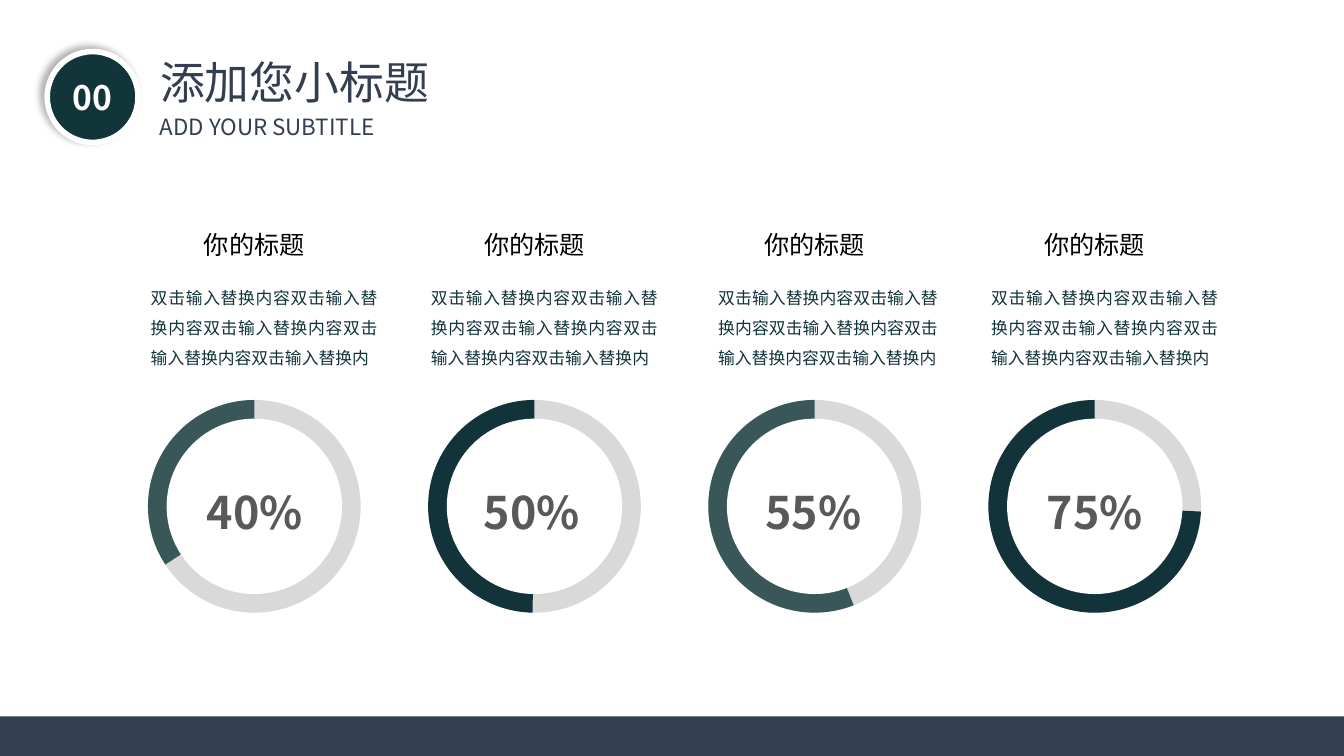
from lxml import etree
from pptx import Presentation
from pptx.dml.color import RGBColor
from pptx.enum.shapes import MSO_SHAPE
from pptx.enum.text import MSO_ANCHOR, MSO_AUTO_SIZE, PP_ALIGN
from pptx.oxml import parse_xml
from pptx.oxml.ns import nsdecls, qn
from pptx.util import Cm, Pt

ELLIPSE, PIE, RECTANGLE = MSO_SHAPE.OVAL, MSO_SHAPE.PIE, MSO_SHAPE.RECTANGLE
LEFT, CENTER, JUSTIFY = PP_ALIGN.LEFT, PP_ALIGN.CENTER, PP_ALIGN.JUSTIFY
TOP, MIDDLE = MSO_ANCHOR.TOP, MSO_ANCHOR.MIDDLE
NO_FIT = MSO_AUTO_SIZE.NONE

WHITE = RGBColor(0xFF, 0xFF, 0xFF)
BLACK = RGBColor(0x00, 0x00, 0x00)
NAVY = RGBColor(0x33, 0x3E, 0x50)
DARK_TEAL = RGBColor(0x12, 0x33, 0x39)
BADGE_TEAL = RGBColor(0x12, 0x35, 0x39)
SOFT_TEAL = RGBColor(0x39, 0x57, 0x59)
TRACK_GRAY = RGBColor(0xD9, 0xD9, 0xD9)
TEXT_GRAY = RGBColor(0x59, 0x59, 0x59)

SLIDE_WIDTH, SLIDE_HEIGHT = 33.87, 19.05
RING_LEFT, RING_TOP, RING_SIZE = 3.73, 10.08, 5.36
RING_THICKNESS, COLUMN_PITCH = 0.47, 7.06
BODY_TEXT = "双击输入替换内容" * 4 + "双击输入替换内"

# Label, start angle of the arc, colour, label offset, body offset
COLUMNS = [
    ("40%", 146.81, SOFT_TEAL, 0.69, 0),
    ("50%", 91.04, DARK_TEAL, 0.61, 0),
    ("55%", 68.45, SOFT_TEAL, 0.64, 0.18),
    ("75%", 2.83, DARK_TEAL, 0.68, 0),
]


class SlideBuilder:
    """Holds the style and the current slide."""

    font_name = "Noto Sans CJK SC"

    def __init__(self, slide):
        self.slide = slide

    def set_text(self, shape, text, size, color, bold=False, align=LEFT,
                 spacing=1.0, anchor=TOP, wrap=True):
        frame = shape.text_frame
        frame_format = {"word_wrap": wrap, "auto_size": NO_FIT,
                        "vertical_anchor": anchor}
        paragraph = frame.paragraphs[0]
        paragraph_format = {"alignment": align, "line_spacing": spacing}
        run = paragraph.add_run()
        run.text = text
        run.font.color.rgb = color
        font_format = {"name": self.font_name, "size": Pt(size), "bold": bold}
        for target, values in ((frame, frame_format),
                               (paragraph, paragraph_format),
                               (run.font, font_format)):
            for name, value in values.items():
                setattr(target, name, value)
        # East Asian glyphs take their own font entry
        east_asian = etree.SubElement(run.font._element, qn("a:ea"))
        east_asian.set("typeface", self.font_name)

    def title(self, left, top, width, height, text, size, color):
        placeholder = self.slide.shapes.title
        position = {"left": left, "top": top, "width": width, "height": height}
        for name, value in position.items():
            setattr(placeholder, name, Cm(value))
        self.set_text(placeholder, text, size, color)

    def text(self, left, top, width, height, text, size, color, **style):
        box = self.slide.shapes.add_textbox(
            Cm(left), Cm(top), Cm(width), Cm(height))
        self.set_text(box, text, size, color, **style)

    def shape(self, kind, left, top, width, height, fill):
        shape = self.slide.shapes.add_shape(
            kind, Cm(left), Cm(top), Cm(width), Cm(height))
        shape.shadow.inherit = False
        shape.fill.solid()
        shape.fill.fore_color.rgb = fill
        shape.line.fill.background()
        return shape

    def ring(self, left, top, size, start_angle, color):
        self.shape(ELLIPSE, left, top, size, size, TRACK_GRAY)
        arc = self.shape(PIE, left, top, size, size, color)
        # Angles are stored in 60000ths of a degree, adjustments in 100000ths
        for index, angle in enumerate((start_angle, 270)):
            arc.adjustments[index] = angle * 0.6
        hole = size - 2 * RING_THICKNESS
        self.shape(ELLIPSE, left + RING_THICKNESS, top + RING_THICKNESS,
                   hole, hole, WHITE)

    def badge(self, left, top, size, text):
        badge = self.shape(ELLIPSE, left, top, size, size, BADGE_TEAL)
        badge.line.color.rgb = WHITE
        badge.line.width = Pt(4)
        effects = badge._element.spPr.find(qn("a:effectLst"))
        effects.append(parse_xml(
            f'<a:outerShdw {nsdecls("a")} blurRad="{Pt(5.1)}" dist="{Pt(4)}" '
            f'dir="{215 * 60000}" algn="ctr" rotWithShape="0">'
            '<a:srgbClr val="000000"><a:alpha val="30000"/></a:srgbClr>'
            '</a:outerShdw>'))
        self.set_text(badge, text, 24, WHITE, bold=True, align=CENTER,
                      anchor=MIDDLE, wrap=False)


def main():
    presentation = Presentation()
    presentation.slide_width = Cm(SLIDE_WIDTH)
    presentation.slide_height = Cm(SLIDE_HEIGHT)
    title_only = presentation.slide_layouts[5]
    builder = SlideBuilder(presentation.slides.add_slide(title_only))

    # Four columns: heading, body, ring and percentage
    for index, column in enumerate(COLUMNS):
        label, start_angle, color, label_offset, body_offset = column
        left = RING_LEFT + index * COLUMN_PITCH
        builder.ring(left, RING_TOP, RING_SIZE, start_angle, color)
        builder.text(left - 0.18 + body_offset, 6.86, 6.22 - body_offset, 2.46,
                     BODY_TEXT, 12, DARK_TEAL, align=JUSTIFY, spacing=1.5)
        builder.text(left - 0.43, 5.51, 6.22, 1.12, "你的标题", 18, BLACK,
                     align=CENTER, spacing=1.2)
        builder.text(left + label_offset, 11.81, 4.01, 1.78, label, 32,
                     TEXT_GRAY, bold=True, align=CENTER, spacing=1.2)

    # Header
    builder.badge(1.19, 1.3, 2.29, "00")
    builder.text(3.78, 2.72, 6.22, 0.94, "ADD YOUR SUBTITLE", 16, NAVY,
                 wrap=False)
    builder.title(3.78, 1.24, 8.61, 1.63, "添加您小标题", 32, NAVY)

    # Footer band
    builder.shape(RECTANGLE, 0, 18.05, SLIDE_WIDTH, 1, NAVY)

    presentation.save("out.pptx")


if __name__ == "__main__":
    main()
